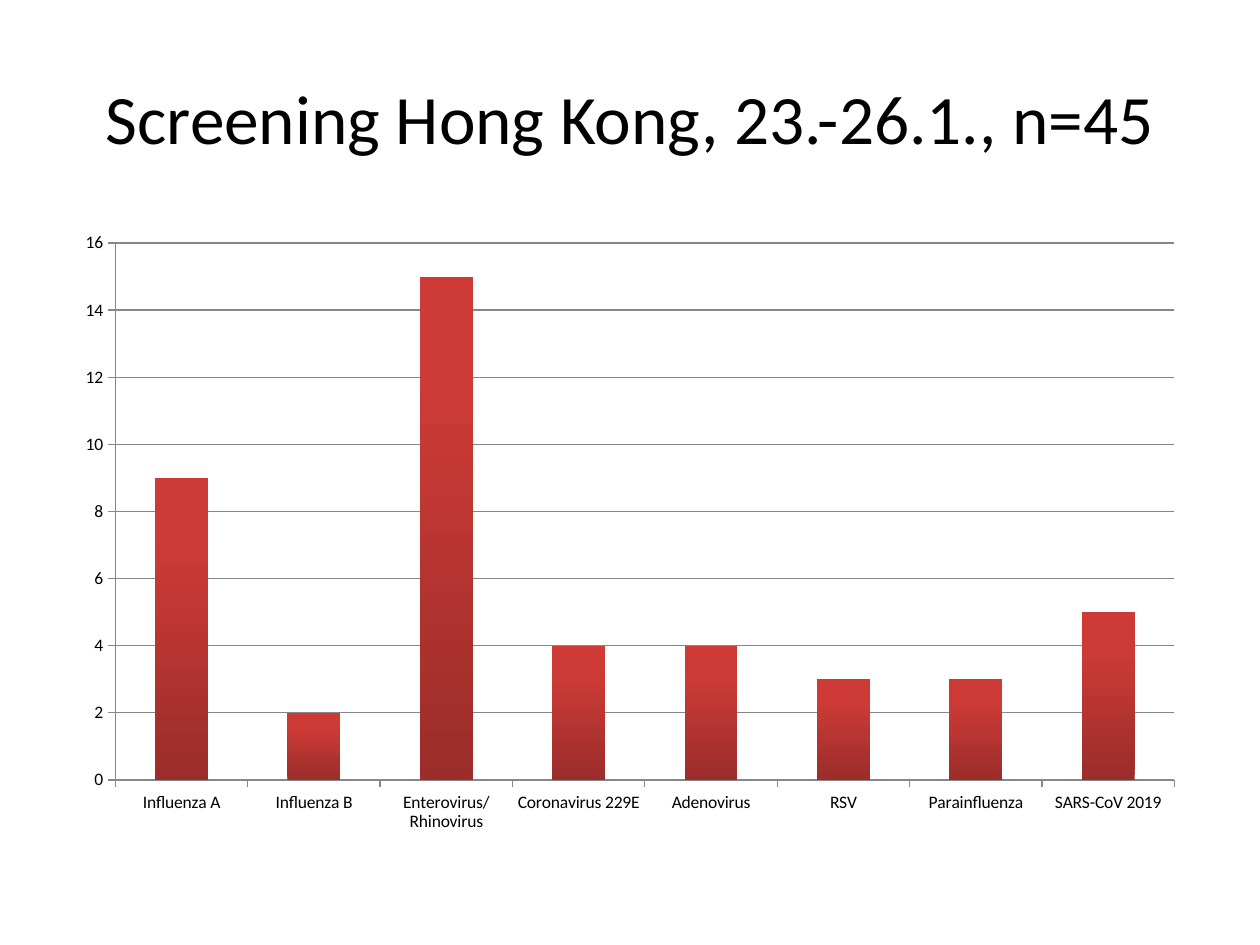
from pptx import Presentation
from pptx.chart.data import CategoryChartData
from pptx.dml.color import RGBColor
from pptx.enum.chart import XL_CHART_TYPE as ChartType, XL_TICK_MARK as TickMark
from pptx.enum.text import MSO_ANCHOR as Anchor, PP_ALIGN as Align
from pptx.util import Cm, Pt

BLACK = RGBColor(0x00, 0x00, 0x00)
GRAY = RGBColor(0x87, 0x87, 0x87)
DARK_RED = RGBColor(0x9B, 0x2D, 0x2A)
RED = RGBColor(0xCE, 0x3B, 0x37)

DETECTIONS = {
    "Influenza A": 9,
    "Influenza B": 2,
    "Enterovirus/Rhinovirus": 15,
    "Coronavirus 229E": 4,
    "Adenovirus": 4,
    "RSV": 3,
    "Parainfluenza": 3,
    "SARS-CoV 2019": 5,
}


def style_font(font, size, name="Calibri", color=BLACK):
    font.size = Pt(size)
    font.name = name
    font.color.rgb = color


def write_text(frame, text, size, align=Align.CENTER, anchor=Anchor.MIDDLE):
    frame.word_wrap = True
    frame.vertical_anchor = anchor
    paragraph = frame.paragraphs[0]
    paragraph.alignment = align
    run = paragraph.add_run()
    run.text = text
    style_font(run.font, size)


class SlideBuilder:
    left = Cm(1.27)
    width = Cm(22.86)

    def __init__(self, slide):
        self.slide = slide

    def title(self, text, top, height):
        heading = self.slide.shapes.title
        heading.left, heading.top = self.left, top
        heading.width, heading.height = self.width, height
        write_text(heading.text_frame, text, size=39.6)

    def column_chart(self, counts, top, height):
        chart_data = CategoryChartData()
        chart_data.categories = list(counts)
        chart_data.add_series("Series 1", list(counts.values()))
        chart = self.slide.shapes.add_chart(
            ChartType.COLUMN_CLUSTERED, self.left, top, self.width, height, chart_data
        ).chart
        chart.has_legend = False
        chart.has_title = False
        style_font(chart.font, 10)
        for axis in (chart.category_axis, chart.value_axis):
            self.style_axis(axis)
        self.style_scale(chart.value_axis)
        self.style_columns(chart.plots[0])

    def style_axis(self, axis):
        axis.major_tick_mark = TickMark.OUTSIDE
        axis.minor_tick_mark = TickMark.NONE
        self.style_line(axis.format.line)

    def style_scale(self, axis):
        axis.minimum_scale, axis.maximum_scale, axis.major_unit = 0, 16, 2
        axis.has_major_gridlines = True
        self.style_line(axis.major_gridlines.format.line)

    def style_line(self, line):
        line.color.rgb = GRAY
        line.width = Pt(0.75)

    def style_columns(self, plot):
        plot.gap_width = 150
        plot.vary_by_categories = False
        fill = plot.series[0].format.fill
        fill.gradient()
        fill.gradient_angle = 90
        stops = zip(fill.gradient_stops, (DARK_RED, RED), (0, 0.8))
        for stop, color, position in stops:
            stop.color.rgb = color
            stop.position = position


def main():
    deck = Presentation()
    deck.slide_width, deck.slide_height = Cm(25.4), Cm(19.05)
    builder = SlideBuilder(deck.slides.add_slide(deck.slide_layouts[5]))
    builder.title("Screening Hong Kong, 23.-26.1., n=45", Cm(0.76), Cm(3.18))
    builder.column_chart(DETECTIONS, Cm(4.45), Cm(12.57))
    deck.save("out.pptx")


if __name__ == "__main__":
    main()
